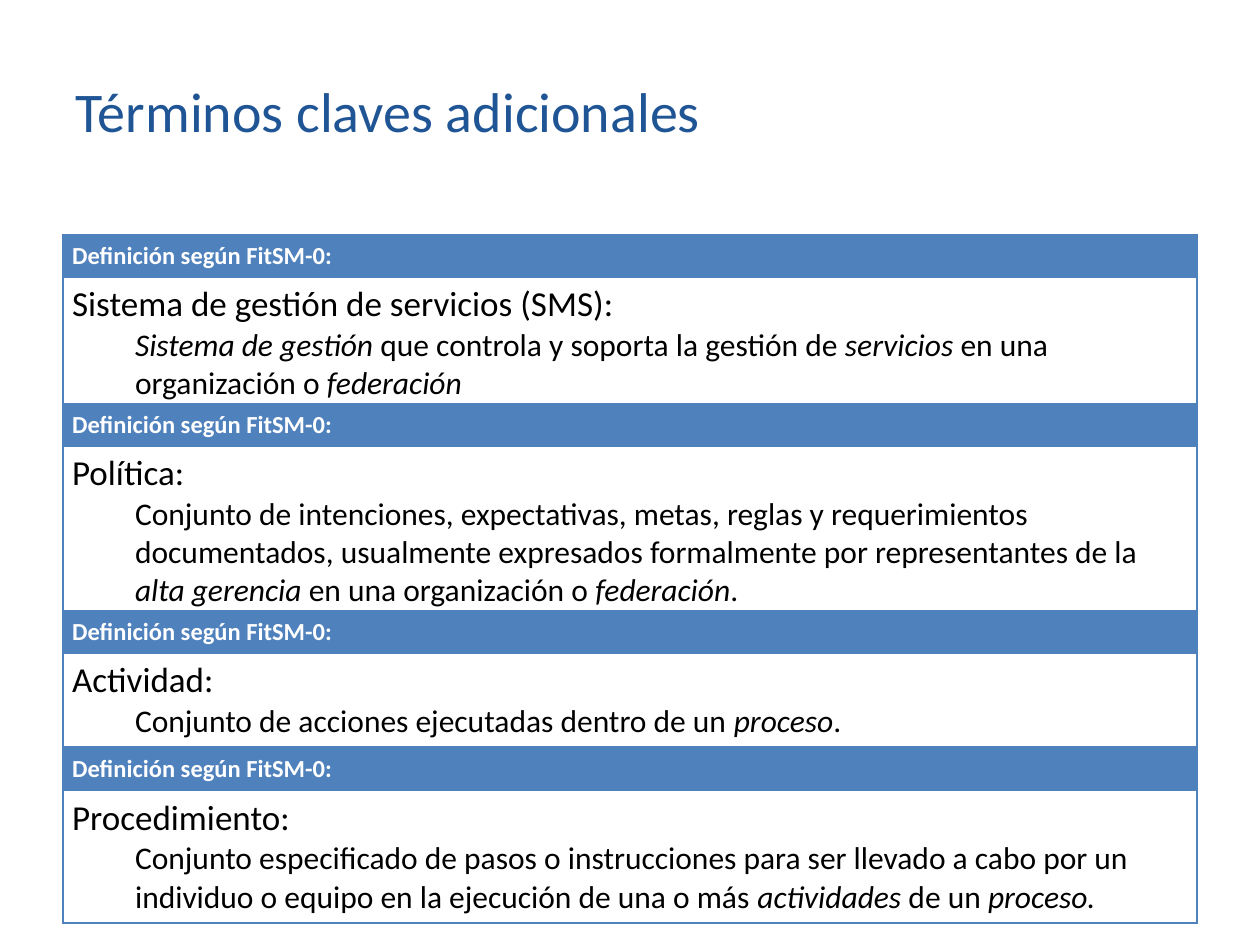
from lxml.etree import SubElement
from pptx import Presentation
from pptx.dml.color import RGBColor
from pptx.enum.text import MSO_ANCHOR, PP_ALIGN
from pptx.oxml.ns import qn
from pptx.util import Pt

# Content: top, header height, body height, term, definition (italics between asterisks)
TITLE = "Términos claves adicionales"
HEADER = "Definición según FitSM-0:"
DEFINITIONS = [
    (134, 16, 56, "Sistema de gestión de servicios (SMS):",
     "*Sistema de gestión* que controla y soporta la gestión de *servicios* "
     "en una organización o *federación*"),
    (230.5, 14, 73, "Política:",
     "Conjunto de intenciones, expectativas, metas, reglas y requerimientos "
     "documentados, usualmente expresados formalmente por representantes de la "
     "*alta gerencia* en una organización o *federación*."),
    (349, 14.5, 49, "Actividad:",
     "Conjunto de acciones ejecutadas dentro de un *proceso*."),
    (427.5, 16, 56, "Procedimiento:",
     "Conjunto especificado de pasos o instrucciones para ser llevado a cabo "
     "por un individuo o equipo en la ejecución de una o más *actividades* "
     "de un *proceso.*"),
]

FONT = "Calibri"
NAVY = RGBColor(0x20, 0x55, 0x95)
BLUE = RGBColor(0x4F, 0x81, 0xBD)
WHITE = RGBColor(0xFF, 0xFF, 0xFF)
BLACK = RGBColor(0, 0, 0)
LEFT, WIDTH = 36, 648


def write(p, text, size, color, bold=False, indent=0):
    """Fill a paragraph, switching italics at each asterisk."""
    if indent:
        p._p.get_or_add_pPr().set("marL", str(Pt(indent)))
    p.alignment = PP_ALIGN.LEFT
    for i, part in enumerate(text.split("*")):
        if part:
            r = p.add_run()
            r.text = part
            r.font.name = FONT
            r.font.size = Pt(size)
            r.font.bold = bold
            r.font.italic = i % 2 == 1
            r.font.color.rgb = color


def format_cell(cell, fill):
    cell.margin_left = cell.margin_right = Pt(5.2)
    cell.margin_top = cell.margin_bottom = Pt(3.6)
    tc_pr = cell._tc.get_or_add_tcPr()
    for side in ("lnL", "lnR", "lnT", "lnB"):
        ln = SubElement(tc_pr, qn(f"a:{side}"), w=str(Pt(0.96)))
        color = SubElement(SubElement(ln, qn("a:solidFill")), qn("a:srgbClr"))
        color.set("val", str(BLUE))
    cell.fill.solid()
    cell.fill.fore_color.rgb = fill


prs = Presentation()
prs.slide_width, prs.slide_height = Pt(720), Pt(540)
s = prs.slides.add_slide(prs.slide_layouts[5])

# Title
title = s.shapes.title
title.left, title.top, title.width, title.height = Pt(36), Pt(21.6), Pt(556), Pt(83)
title.text_frame.vertical_anchor = MSO_ANCHOR.MIDDLE
write(title.text_frame.paragraphs[0], TITLE, 32, NAVY)

# One table for each definition; rows grow to fit their text
for top, header_height, body_height, term, definition in DEFINITIONS:
    table = s.shapes.add_table(2, 1, Pt(LEFT), Pt(top), Pt(WIDTH),
                               Pt(header_height + body_height)).table
    table.rows[0].height = Pt(header_height)
    table.rows[1].height = Pt(body_height)
    header, body = table.cell(0, 0), table.cell(1, 0)
    format_cell(header, BLUE)
    format_cell(body, WHITE)
    write(header.text_frame.paragraphs[0], HEADER, 14, WHITE, bold=True)
    tf = body.text_frame
    write(tf.paragraphs[0], term, 20, BLACK)
    write(tf.add_paragraph(), definition, 18, BLACK, indent=36)

prs.save("out.pptx")
